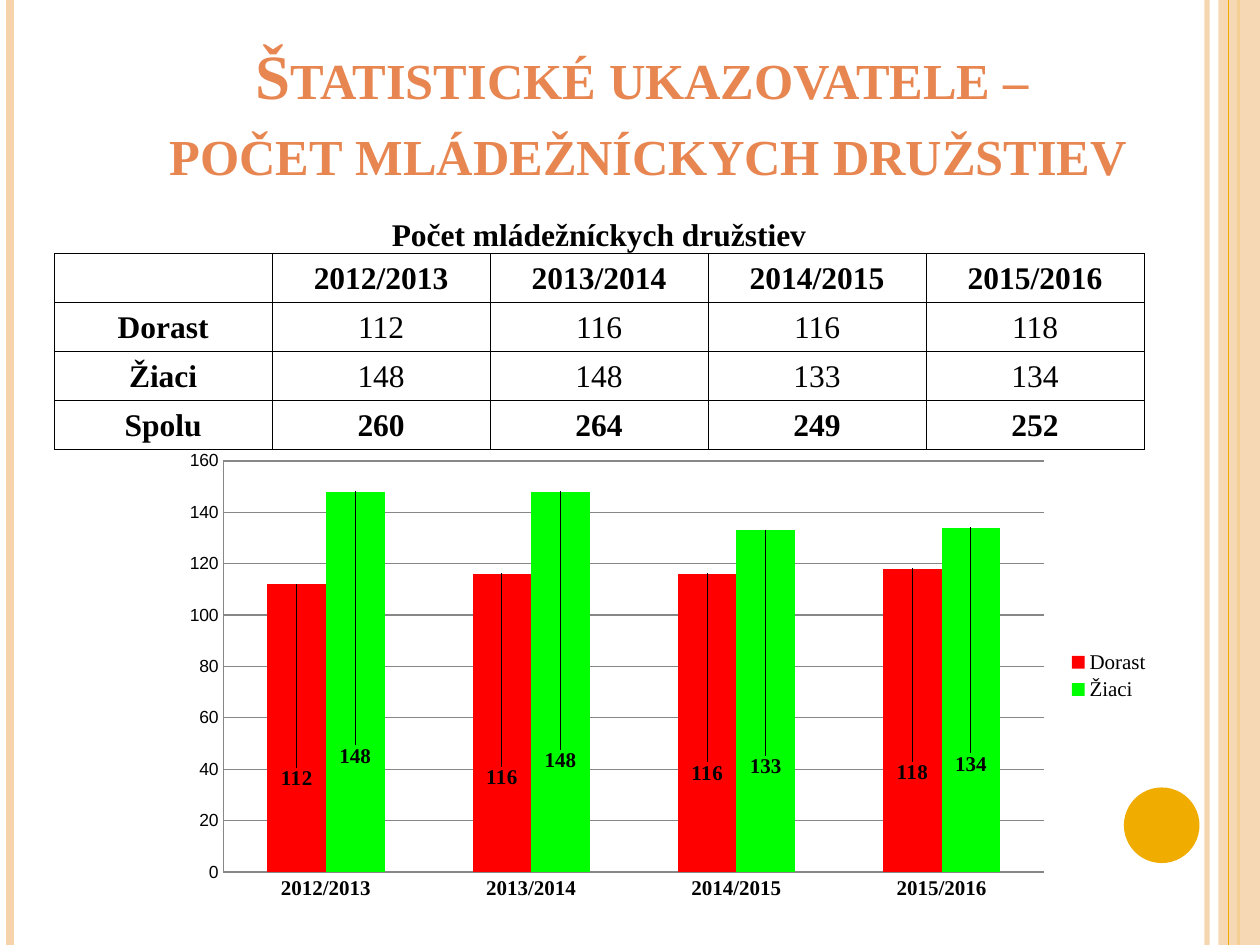
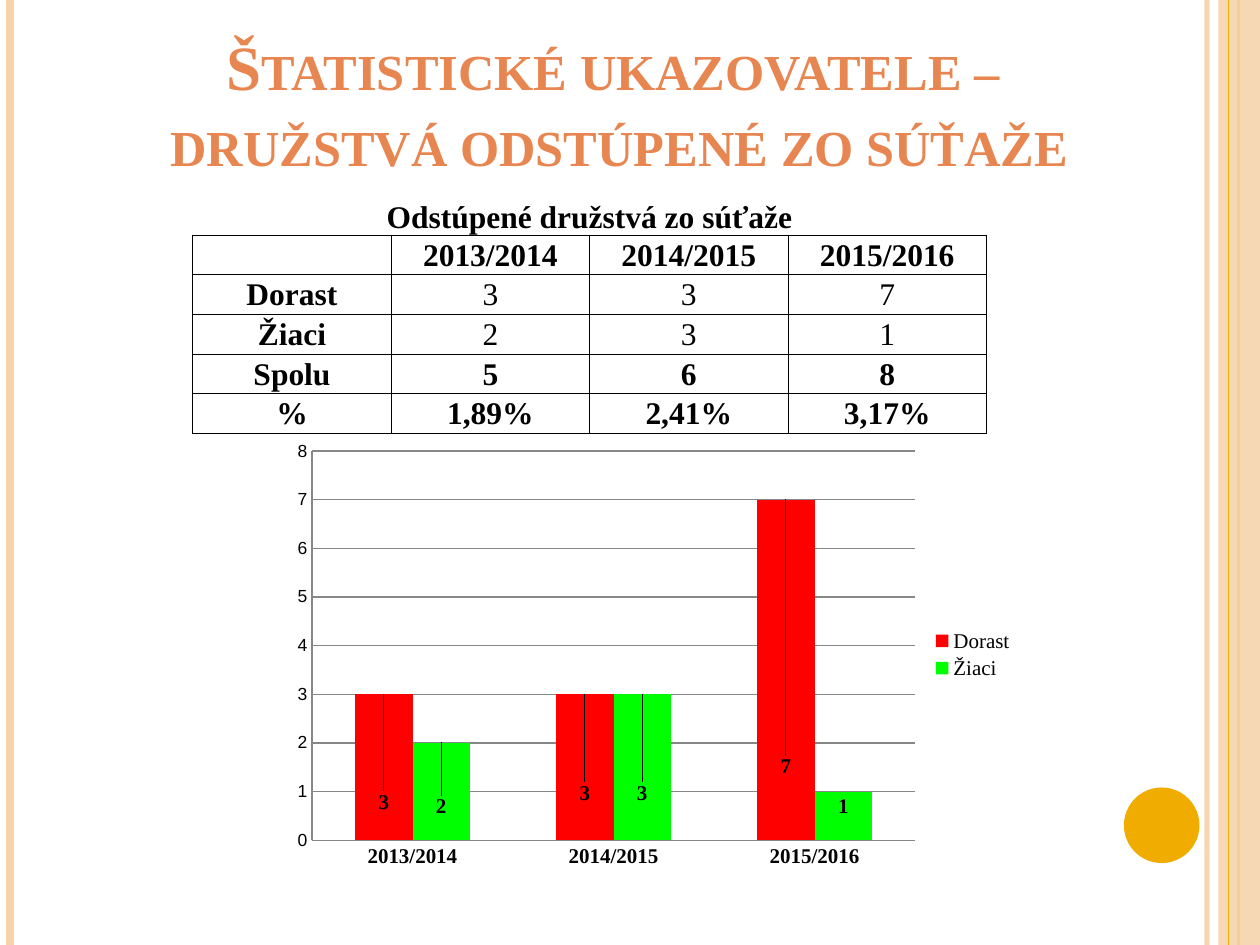
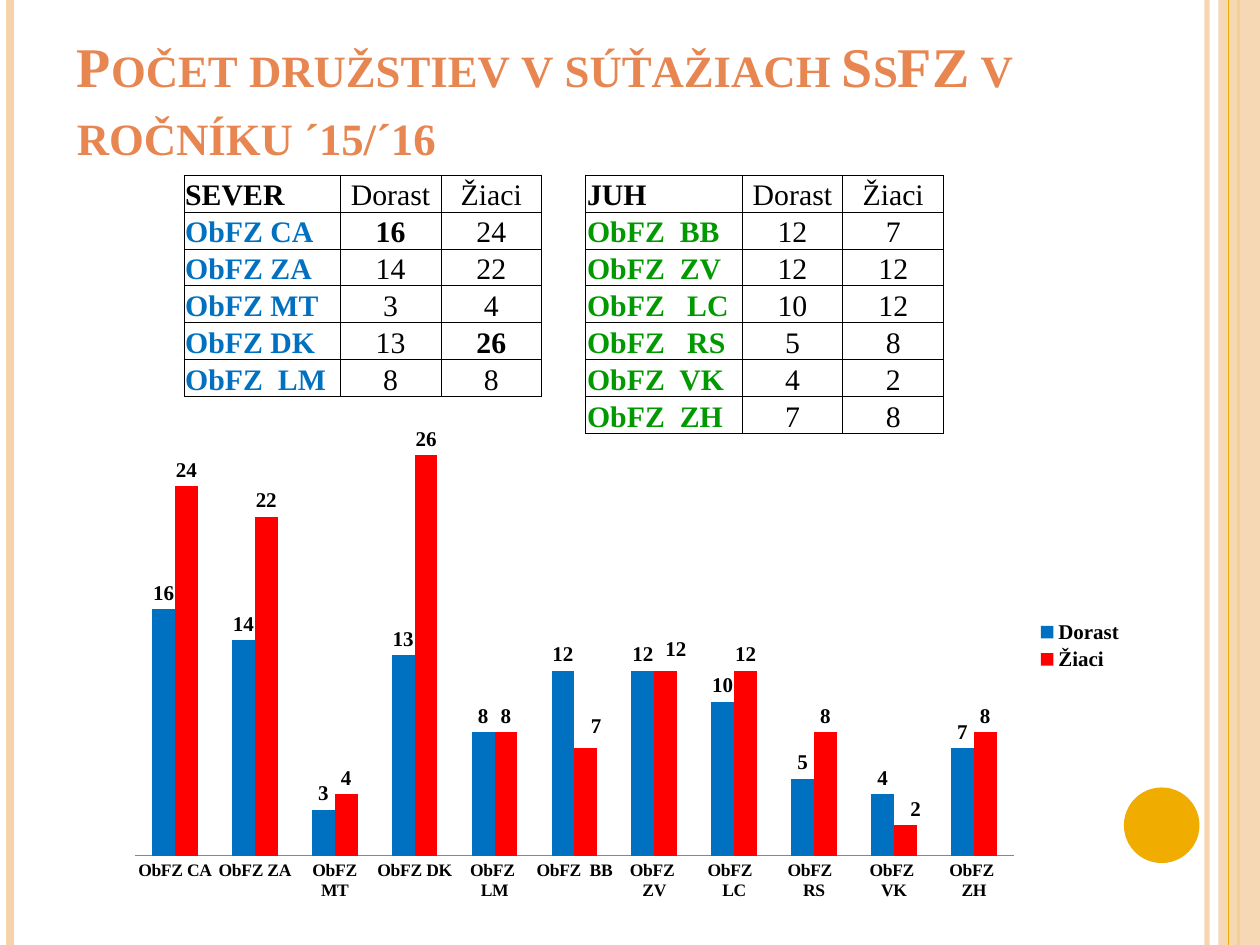
"""Build three slides on youth football team counts, each with a table and a column chart."""
from pptx import Presentation
from pptx.chart.data import CategoryChartData
from pptx.dml.color import RGBColor
from pptx.enum.chart import XL_CHART_TYPE as CT, XL_LABEL_POSITION as LP
from pptx.enum.chart import XL_LEGEND_POSITION as LEG, XL_TICK_MARK as TICK
from pptx.enum.shapes import MSO_CONNECTOR as CONN, MSO_SHAPE as SHAPE
from pptx.enum.text import MSO_ANCHOR as ANC, MSO_AUTO_SIZE as FIT, PP_ALIGN as AL
from pptx.oxml import parse_xml
from pptx.oxml.ns import nsdecls, qn
from pptx.oxml.xmlchemy import OxmlElement
from pptx.util import Inches, Pt

SERIF = "Times New Roman"
BLACK, ORANGE, PEACH, GOLD = "000000", "E88651", "F6D3AB", "F0AD00"
RED, LIME, BLUE, GREEN, GREY = "FF0000", "00FF00", "0070C0", "009900", "878787"
NO_STYLE = "{2D5ABB26-0587-4C30-8999-92F81FD0307C}"
rgb = RGBColor.from_string


def set_font(font, size, bold=False, color=BLACK, name=SERIF):
    font.name, font.size, font.bold = name, Pt(size), bold
    font.color.rgb = rgb(color)


def manual_layout(**parts):
    items = "".join(f'<c:{k} val="{v}"/>' for k, v in parts.items())
    return parse_xml(f'<c:layout {nsdecls("c")}><c:manualLayout>{items}'
                     '</c:manualLayout></c:layout>')


teams = [
    ["", "2012/2013", "2013/2014", "2014/2015", "2015/2016"],
    ["Dorast", "112", "116", "116", "118"],
    ["Žiaci", "148", "148", "133", "134"],
    ["Spolu", "260", "264", "249", "252"],
]
withdrawn = [
    ["", "2013/2014", "2014/2015", "2015/2016"],
    ["Dorast", "3", "3", "7"],
    ["Žiaci", "2", "3", "1"],
    ["Spolu", "5", "6", "8"],
    ["%", "1,89%", "2,41%", "3,17%"],
]
north = [
    ["SEVER", "Dorast", "Žiaci"],
    ["ObFZ CA", "16", "24"],
    ["ObFZ ZA", "14", "22"],
    ["ObFZ MT", "3", "4"],
    ["ObFZ DK", "13", "26"],
    ["ObFZ  LM", "8", "8"],
]
south = [
    ["JUH", "Dorast", "Žiaci"],
    ["ObFZ  BB", "12", "7"],
    ["ObFZ  ZV", "12", "12"],
    ["ObFZ   LC", "10", "12"],
    ["ObFZ   RS", "5", "8"],
    ["ObFZ  VK", "4", "2"],
    ["ObFZ  ZH", "7", "8"],
]
regions = [n + [None] + s for n, s in zip(north + [[None] * 3], south)]
region_columns = list(zip(*north[1:], *south[1:]))

pages = [
    dict(title="Štatistické ukazovatele – \vpočet mládežníckych družstiev",
         title_at=(1.06, 0.28, 8.17, 1.26), title_size=36,
         caption="Počet mládežníckych družstiev", rows=teams,
         table_at=(0.43, 1.62), row_h=0.39, cols=[1.73] * 5,
         cats=teams[0][1:], values=[teams[1][1:], teams[2][1:]], colors=(RED, LIME),
         chart_at=(1.38, 3.51, 7.85, 3.71), plot=(0.05, 0.04, 0.83, 0.88), top=160, step=20,
         moves=[{0: (0, 0.45), 1: (0, 0.47), 2: (0, 0.46), 3: (0, 0.47)},
                {0: (0, 0.6), 1: (0, 0.61), 2: (0, 0.54), 3: (0, 0.54)}]),
    dict(title="Štatistické ukazovatele – \vdružstvá odstúpené zo súťaže",
         title_at=(0.83, 0.21, 8.17, 1.26), title_size=36,
         caption="Odstúpené družstvá zo súťaže", rows=withdrawn,
         table_at=(1.53, 1.55), row_h=0.315, cols=[1.575] * 4,
         cats=withdrawn[0][1:], values=[withdrawn[1][1:], withdrawn[2][1:]], colors=(RED, LIME),
         chart_at=(2.24, 3.44, 5.91, 3.51), plot=(0.04, 0.04, 0.81, 0.88), top=8, step=1,
         moves=[{0: (0, 0.28), 1: (0, 0.26), 2: (0, 0.64)},
                {0: (0, 0.18), 1: (0, 0.26), 2: (0, 0.07)}]),
    dict(title="Počet družstiev v súťažiach SsFZ v ročníku ´15/´16",
         title_at=(0.51, 0.21, 8.67, 1.16), title_size=32,
         caption=None, rows=regions,
         table_at=(1.46, 1.39), row_h=0.293, cols=[1.24, 0.8, 0.8, 0.35, 1.24, 0.8, 0.8],
         cats=region_columns[0], values=region_columns[1:], colors=(BLUE, RED),
         chart_at=(0.91, 3.04, 8.11, 4.17), plot=(0.02, 0.02, 0.86, 0.88), top=30, step=5,
         moves=[{}, {5: (0.01, -0.01), 6: (0.01, -0.01), 9: (0.01, 0)}]),
]

prs = Presentation()
prs.slide_width, prs.slide_height = Inches(10), Inches(7.5)
layout = prs.slide_layouts[5]
slides = [prs.slides.add_slide(layout) for page in pages]

bands = [
    ("line", (9.58, 0, 9.58, 7.5), PEACH, 3, 93),
    ("line", (0.08, 0, 0.08, 7.5), PEACH, 4.5, 100),
    ("line", (9.83, 0, 9.83, 7.5), GOLD, 1.5, 100),
    (SHAPE.RECTANGLE, (9.67, 0, 0.33, 7.5), PEACH, 0, 87),
    ("line", (9.75, 0, 9.75, 7.5), GOLD, 0.75, 100),
    (SHAPE.OVAL, (8.92, 6.25, 0.6, 0.6), GOLD, 0, 100),
]
for kind, at, color, width, opacity in bands:
    at = [Inches(v) for v in at]
    if kind == "line":
        sp = slides[0].shapes.add_connector(CONN.STRAIGHT, *at)
        sp.line.color.rgb, sp.line.width = rgb(color), Pt(width)
        sp.element.spPr.append(OxmlElement("a:effectLst"))
    else:
        sp = slides[0].shapes.add_shape(kind, *at)
        sp.fill.solid()
        sp.fill.fore_color.rgb = rgb(color)
        sp.line.fill.background()
        sp.shadow.inherit = False
    if opacity < 100:
        alpha = OxmlElement("a:alpha")
        alpha.set("val", str(opacity * 1000))
        sp.element.spPr.find(".//" + qn("a:srgbClr")).append(alpha)
    prs.slide_master.shapes.element.append(sp.element)

for s, page in zip(slides, pages):
    caption = page["caption"]

    title = s.shapes.title
    title.left, title.top, title.width, title.height = [Inches(v) for v in page["title_at"]]
    tf = title.text_frame
    tf.text = page["title"]
    tf.word_wrap, tf.auto_size, tf.vertical_anchor = True, FIT.NONE, ANC.BOTTOM
    p = tf.paragraphs[0]
    p.alignment = AL.CENTER if caption else AL.LEFT
    for r in p.runs:
        set_font(r.font, page["title_size"], True, ORANGE)
        r.font.element.set("cap", "small") if hasattr(r.font, "element") else r._r.rPr.set("cap", "small")

    rows, cols, row_h = page["rows"], page["cols"], page["row_h"]
    if caption:
        rows = [[caption] + [None] * (len(cols) - 1)] + rows
    frame = s.shapes.add_table(len(rows), len(cols), *[Inches(v) for v in page["table_at"]],
                               Inches(sum(cols)), Inches(row_h * len(rows)))
    table = frame.table
    table.first_row = table.horz_banding = False
    frame.element.find(".//" + qn("a:tableStyleId")).text = NO_STYLE
    for column, width in zip(table.columns, cols):
        column.width = Inches(width)
    for i, row in enumerate(rows):
        table.rows[i].height = Inches(row_h)
        for j, value in enumerate(row):
            cell = table.cell(i, j)
            cell.margin_left = cell.margin_right = cell.margin_top = Inches(0.01)
            cell.margin_bottom = 0
            p = cell.text_frame.paragraphs[0]
            r = p.add_run()
            r.text = value or ""
            color = BLACK
            if caption:
                bold = j == 0 or row[0] not in ("Dorast", "Žiaci")
                cell.vertical_anchor = ANC.MIDDLE if i else ANC.BOTTOM
                p.alignment = AL.CENTER
            else:
                is_name = j in (0, 4)
                bold = is_name or value in ("16", "26")
                cell.vertical_anchor = ANC.BOTTOM
                p.alignment = AL.LEFT if is_name else AL.CENTER
                if is_name and i:
                    color = GREEN if j else BLUE
            set_font(r.font, 18 if caption else 17, bold, color)
            if value is not None and value != caption:
                for side in "LRTB":
                    cell._tc.get_or_add_tcPr().append(parse_xml(
                        f'<a:ln{side} {nsdecls("a")} w="6350"><a:solidFill>'
                        f'<a:srgbClr val="{BLACK}"/></a:solidFill></a:ln{side}>'))
            cell.fill.background()
    if caption:
        table.cell(0, 0).merge(table.cell(0, len(cols) - 1))

    data = CategoryChartData()
    data.categories = page["cats"]
    for name, values in zip(("Dorast", "Žiaci"), page["values"]):
        data.add_series(name, [int(v) for v in values])
    chart = s.shapes.add_chart(CT.COLUMN_CLUSTERED, *[Inches(v) for v in page["chart_at"]],
                               data).chart
    set_font(chart.font, 10, name="Arial")
    chart.has_title = False
    chart.has_legend = True
    chart.legend.position, chart.legend.include_in_layout = LEG.RIGHT, False
    set_font(chart.legend.font, 12, not caption)

    cat_axis, val_axis = chart.category_axis, chart.value_axis
    cat_axis.major_tick_mark = val_axis.major_tick_mark = TICK.NONE
    set_font(cat_axis.tick_labels.font, 12 if caption else 10, True)
    val_axis.minimum_scale, val_axis.maximum_scale = 0, page["top"]
    val_axis.major_unit = page["step"]
    val_axis.has_major_gridlines = val_axis.visible = bool(caption)
    lines = [cat_axis.format.line]
    if caption:
        lines += [val_axis.format.line, val_axis.major_gridlines.format.line]
    for line in lines:
        line.color.rgb, line.width = rgb(GREY), Pt(0.75)

    plot = chart.plots[0]
    plot.gap_width, plot.overlap, plot.vary_by_categories = 150, 0, False
    for series, color, moves in zip(plot.series, page["colors"], page["moves"]):
        series.format.fill.solid()
        series.format.fill.fore_color.rgb = rgb(color)
        series.data_labels.show_value = True
        labels = [series.data_labels] + [series.points[k].data_label for k in moves]
        for label in labels:
            label.position = LP.OUTSIDE_END
            set_font(label.font, 12, True)
    offsets = [move for moves in page["moves"] for move in moves.values()]
    for label, (x, y) in zip(chart.element.iter(qn("c:dLbl")), offsets):
        label.find(qn("c:idx")).addnext(manual_layout(x=x, y=y))

    area = chart.element.find(".//" + qn("c:plotArea"))
    for auto in area.findall(qn("c:layout")):
        area.remove(auto)
    x, y, w, h = page["plot"]
    area.insert(0, manual_layout(layoutTarget="inner", xMode="edge", yMode="edge",
                                 x=x, y=y, w=w, h=h))
    clear = f'<c:spPr {nsdecls("c", "a")}><a:noFill/><a:ln><a:noFill/></a:ln></c:spPr>'
    area.append(parse_xml(clear))
    chart.element.find(qn("c:chart")).addnext(parse_xml(clear))

prs.save("out.pptx")
